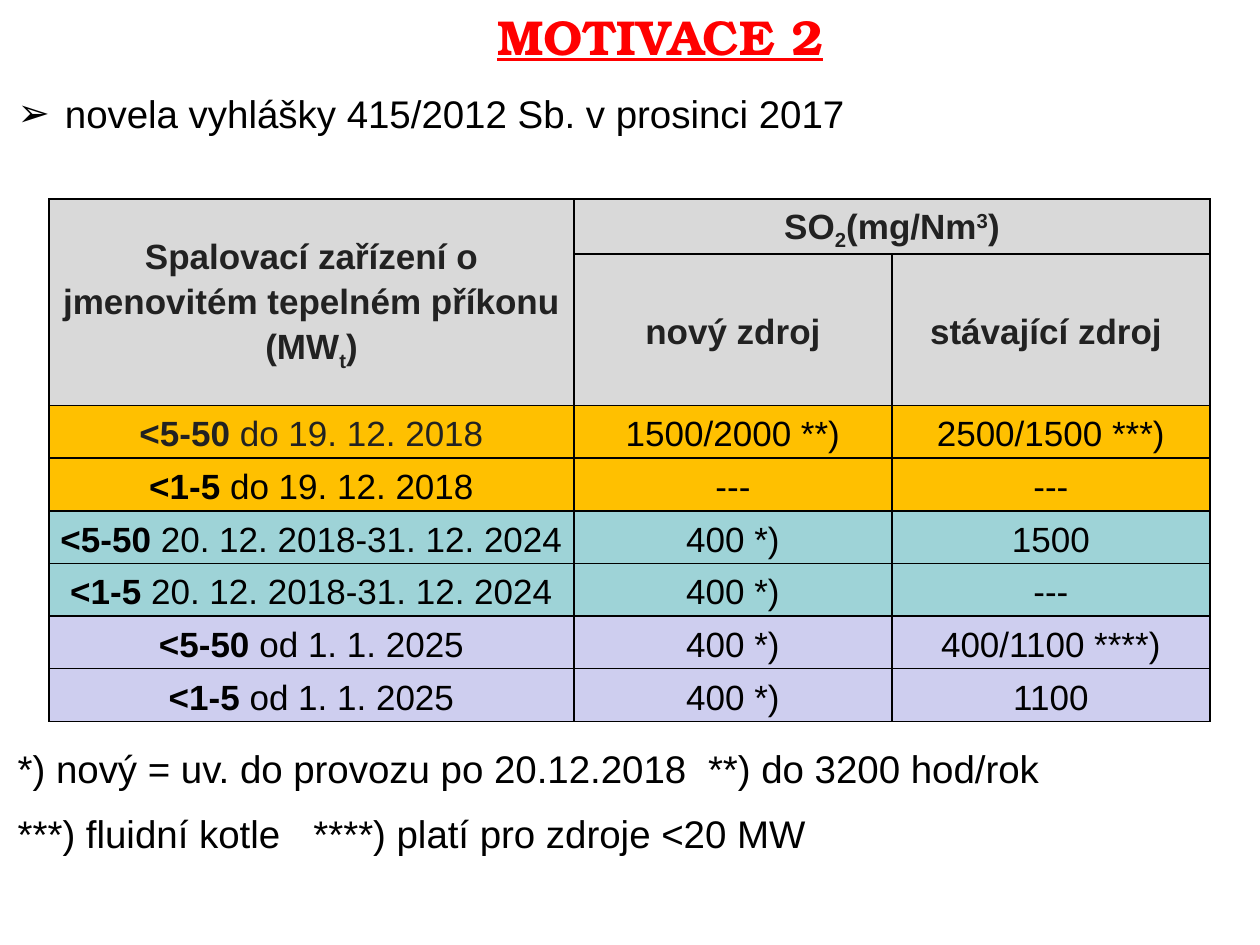
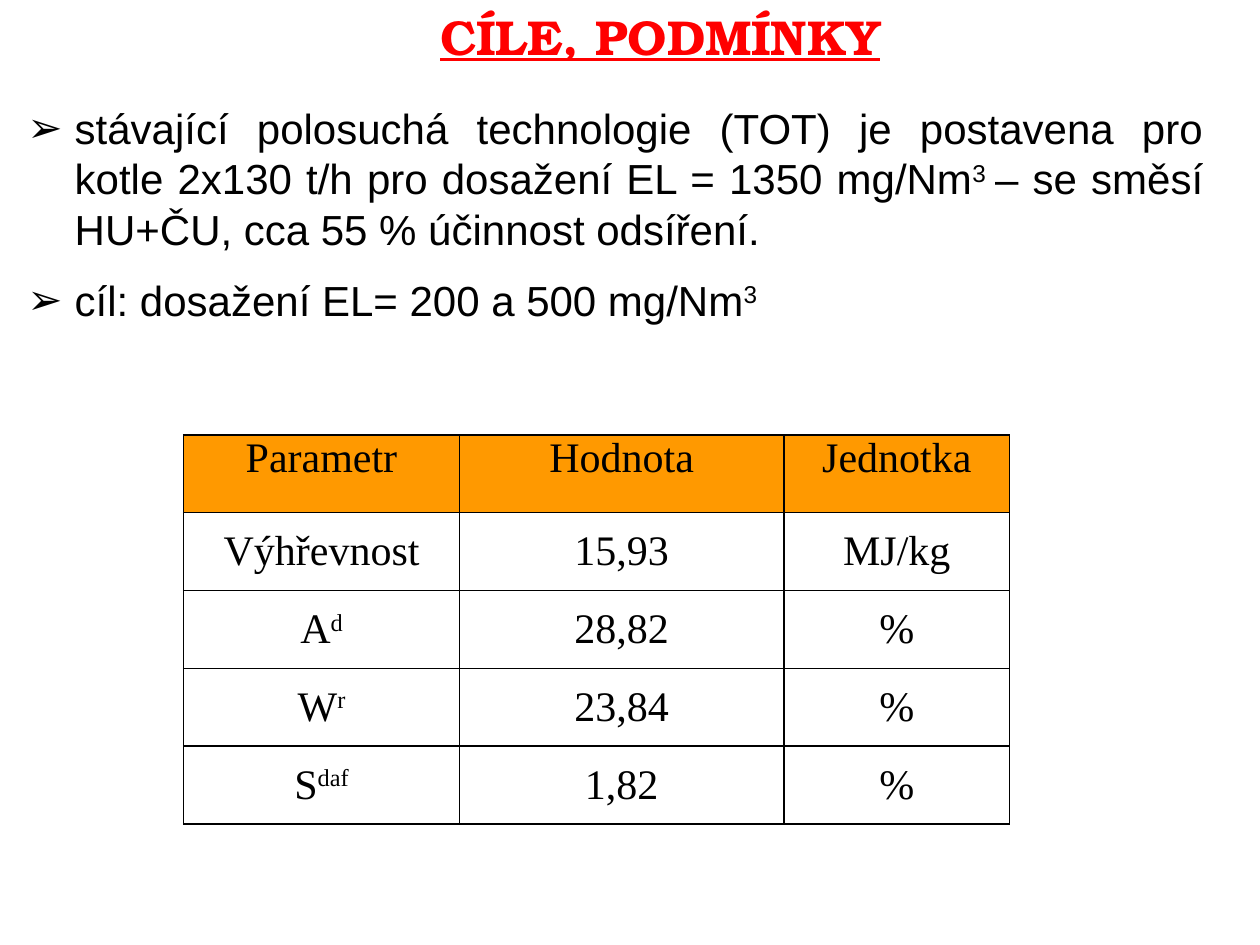
import pptx
import pptx.dml.color
import pptx.enum.text
import pptx.oxml.ns
import pptx.util
from lxml import etree

Pt = pptx.util.Pt
ALIGN = pptx.enum.text.PP_ALIGN
ANCHOR = pptx.enum.text.MSO_ANCHOR
BLACK, INK, RED = "000000", "222222", "FF0000"
GREY, GOLD, TEAL, LILAC, ORANGE = "D9D9D9", "FFC000", "9ED3D7", "CECEEF", "FF9900"
BODY_FONT, TITLE_FONT, TABLE_FONT = "Arial", "TeX Gyre Bonum", "Times New Roman"


def colour(hex_code):
    """Turn a hex string into a colour."""
    return pptx.dml.color.RGBColor.from_string(hex_code)


def add_element(parent, tag, **attributes):
    """Append a DrawingML element and return it."""
    return etree.SubElement(parent, pptx.oxml.ns.qn(tag), attributes)


class Page:
    """One slide with the shared title, text and table styles."""

    def __init__(self, deck, title):
        """Add a blank slide with its heading."""
        self.slide = deck.slides.add_slide(deck.slide_layouts[6])
        para = self.frame(-0.72, 0, 720, 41).paragraphs[0]
        para._p.get_or_add_pPr().set("marL", str(Pt(36)))
        para.alignment = ALIGN.CENTER
        self.add_spans(para, "!" + title, TITLE_FONT, 28, RED)
        para.runs[0].font.underline = True

    def frame(self, left, top, width, height):
        """Add a wrapping text box and return its text frame."""
        box = self.slide.shapes.add_textbox(Pt(left), Pt(top), Pt(width), Pt(height))
        box.text_frame.word_wrap = True
        box.text_frame.auto_size = pptx.enum.text.MSO_AUTO_SIZE.SHAPE_TO_FIT_TEXT
        return box.text_frame

    def add_spans(self, para, markup, font, size, ink=BLACK):
        """Add spans split by |, led by ! for bold, ^ for raised, _ for lowered."""
        for part in markup.split("|"):
            text = part.lstrip("!^_")
            marks = part[:len(part) - len(text)]
            span = para.add_run()
            span.text = text
            span.font.name, span.font.size = font, Pt(size)
            span.font.bold = "!" in marks
            span.font.color.rgb = colour(ink)
            for mark, shift in (("^", "30000"), ("_", "-25000")):
                if mark in marks:
                    span._r.get_or_add_rPr().set("baseline", shift)

    def body(self, left, top, height, size, lines, bullet=False, tabs=()):
        """Add justified paragraphs, with bullets or one tab stop each."""
        frame = self.frame(left, top, 686, height)
        for index, line in enumerate(lines):
            para = frame.add_paragraph() if index else frame.paragraphs[0]
            para.alignment = ALIGN.JUSTIFY
            properties = para._p.get_or_add_pPr()
            if index:
                para.space_before = Pt(size / 2)
            if bullet:
                properties.set("marL", str(Pt(27)))
                properties.set("indent", str(Pt(-27)))
                add_element(properties, "a:buFont", typeface=BODY_FONT)
                add_element(properties, "a:buChar", char="➢")
            if tabs:
                stops = add_element(properties, "a:tabLst")
                add_element(stops, "a:tab", pos=str(Pt(tabs[index])), algn="l")
            self.add_spans(para, line, BODY_FONT, size)

    def border(self, cell):
        """Draw thin black lines on the four sides of a cell."""
        properties = cell._tc.get_or_add_tcPr()
        for side in "LRTB":
            line = add_element(properties, f"a:ln{side}", w=str(Pt(1)))
            fill = add_element(line, "a:solidFill")
            add_element(fill, "a:srgbClr", val=BLACK)

    def table(self, left, top, widths, heights, rows, fills, font, size,
              merges=(), inks=None, line_spacing=None, top_rows=0):
        """Add a bordered table with one fill per row and centred text."""
        table = self.slide.shapes.add_table(
            len(rows), len(widths), Pt(left), Pt(top), Pt(sum(widths)), Pt(sum(heights))).table
        table.first_row = table.horz_banding = False
        for column, width in zip(table.columns, widths):
            column.width = Pt(width)
        for first, last in merges:
            table.cell(*first).merge(table.cell(*last))
        for r, (row, height, fill) in enumerate(zip(rows, heights, fills)):
            table.rows[r].height = Pt(height)
            for c, markup in enumerate(row):
                cell = table.cell(r, c)
                cell.margin_left = cell.margin_right = Pt(5)
                cell.margin_top = cell.margin_bottom = 0
                cell.vertical_anchor = ANCHOR.TOP if r < top_rows else ANCHOR.MIDDLE
                self.border(cell)
                if fill:
                    cell.fill.solid()
                    cell.fill.fore_color.rgb = colour(fill)
                else:
                    cell.fill.background()
                if markup:
                    para = cell.text_frame.paragraphs[0]
                    para.alignment = ALIGN.CENTER
                    para.line_spacing = line_spacing
                    self.add_spans(para, markup, font, size, (inks or {}).get((r, c), BLACK))


def build_limits(deck):
    """Build the slide with the emission limits."""
    page = Page(deck, "MOTIVACE 2")
    page.body(3, 48, 34, 22, ["novela vyhlášky 415/2012 Sb. v prosinci 2017"], bullet=True)
    rows = [
        ["!Spalovací zařízení o jmenovitém tepelném příkonu (MW|!_t|!)",
         "!SO|!_2|!(mg/Nm|!^3|!)", ""],
        ["", "!nový zdroj", "!stávající zdroj "],
        ["!<5-50 |do 19. 12. 2018", "1500/2000 **)", "2500/1500 ***)"],
        ["!<1-5| do 19. 12. 2018", "---", "---"],
        ["!<5-50| 20. 12. 2018-31. 12. 2024", "400 *)", "1500"],
        ["!<1-5| 20. 12. 2018-31. 12. 2024", "400 *)", "---"],
        ["!<5-50| od 1. 1. 2025", "400 *)", "400/1100 ****)"],
        ["!<1-5| od 1. 1. 2025", "400 *)", "1100"],
    ]
    fills = [shade for shade in (GREY, GOLD, TEAL, LILAC) for _ in range(2)]
    dark_cells = [(0, 0), (0, 1), (1, 1), (1, 2), (2, 0)]
    page.table(28, 113.7, [300, 181.7, 181.7], [29.5, 59] + [30.1] * 6, rows, fills,
               BODY_FONT, 20, merges=[((0, 0), (1, 0)), ((0, 1), (0, 2))],
               inks=dict.fromkeys(dark_cells, INK), line_spacing=1.15)
    page.body(3, 422, 74, 22, [
        "*) nový = uv. do provozu po 20.12.2018\t**) do 3200 hod/rok",
        "***) fluidní kotle\t****) platí pro zdroje <20 MW",
    ], tabs=[394.5, 169])


def build_goals(deck):
    """Build the slide with the goals and fuel parameters."""
    page = Page(deck, "CÍLE, PODMÍNKY")
    page.body(8.6, 55, 138, 24, [
        "stávající polosuchá technologie (TOT) je postavena pro kotle 2x130 t/h "
        "pro dosažení EL = 1350 mg/Nm|^3 |– se směsí HU+ČU, cca 55 % účinnost odsíření.",
        "cíl: dosažení EL= 200 a 500 mg/Nm|^3",
    ], bullet=True)
    rows = [
        ["Parametr", "Hodnota", "Jednotka"],
        ["Výhřevnost", "15,93", "MJ/kg"],
        ["A|^d", "28,82", "%"],
        ["W|^r", "23,84", "%"],
        ["S|^daf", "1,82", "%"],
    ]
    page.table(105, 248.5, [157.5, 185.5, 129], [44.5] * 5, rows, [ORANGE] + [None] * 4,
               TABLE_FONT, 24, top_rows=1)


def main():
    """Build and save the deck."""
    deck = pptx.Presentation()
    deck.slide_width, deck.slide_height = Pt(720), Pt(540)
    build_limits(deck)
    build_goals(deck)
    deck.save("out.pptx")


if __name__ == "__main__":
    main()
